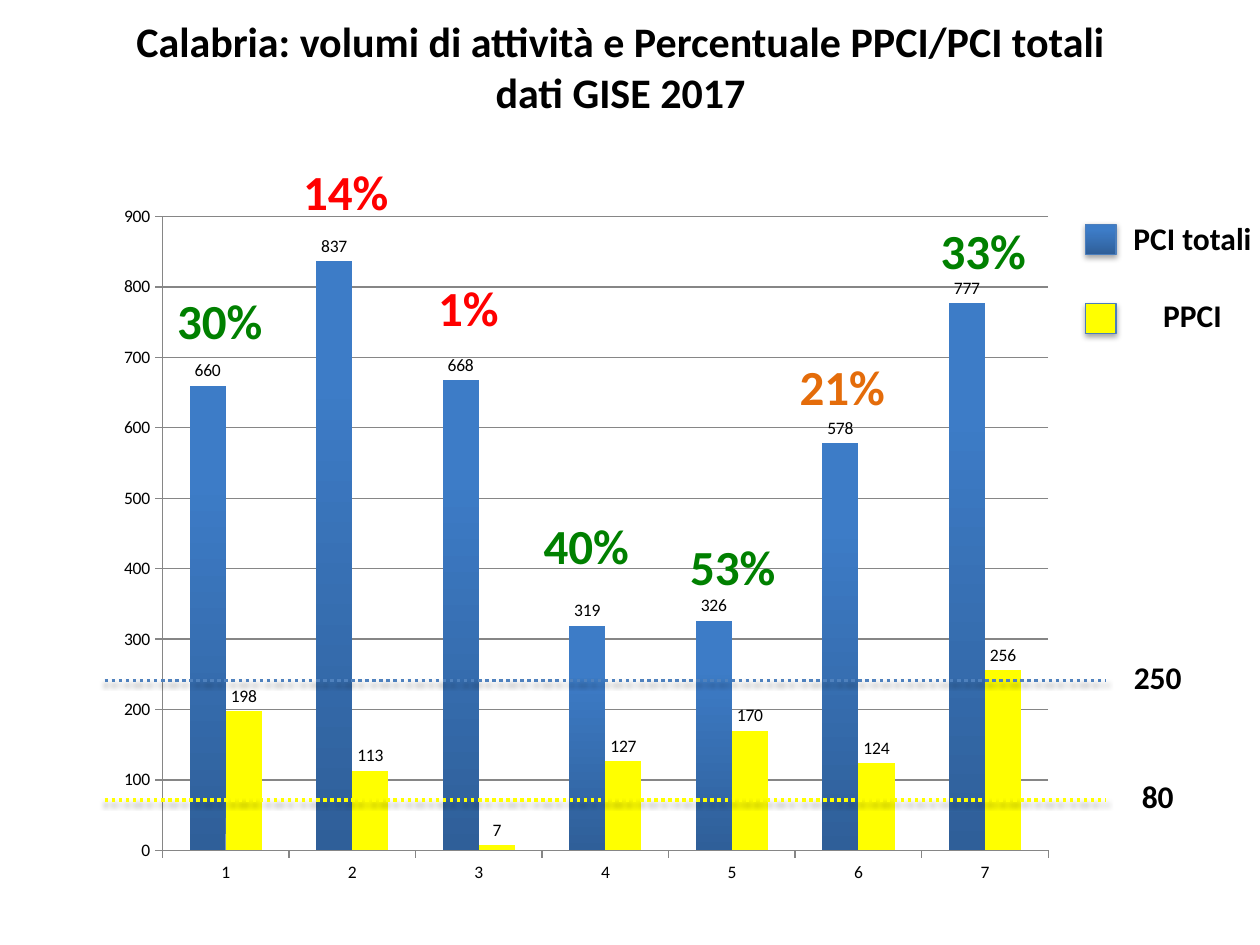
from lxml.etree import SubElement
from pptx import Presentation
from pptx.chart.data import CategoryChartData
from pptx.dml.color import RGBColor
from pptx.enum.chart import XL_CHART_TYPE as ChartType, XL_LABEL_POSITION as LabelPosition
from pptx.enum.chart import XL_TICK_MARK as TickMark
from pptx.enum.dml import MSO_LINE_DASH_STYLE as Dash
from pptx.enum.shapes import MSO_CONNECTOR as Connector, MSO_SHAPE as Shape
from pptx.enum.text import MSO_ANCHOR as Anchor, PP_ALIGN as Align
from pptx.oxml.ns import qn
from pptx.util import Cm, Pt

FONT = "Calibri"
COLORS = {
    "black": "000000",
    "blue": "4F81BD",
    "dark blue": "2F5F99",
    "bright blue": "3D7CC7",
    "outline": "4B7EBC",
    "yellow": "FFFF00",
    "grid": "868686",
    "green": "008000",
    "red": "FF0000",
    "orange": "E46C0A",
}
TOTAL_PCI = (660, 837, 668, 319, 326, 578, 777)
PRIMARY_PCI = (198, 113, 7, 127, 170, 124, 256)

# text, colour, centre x and top in cm
PERCENTAGES = (
    ("30%", "green", 4.43, 5.72),
    ("14%", "red", 6.97, 3.12),
    ("1%", "red", 9.44, 5.46),
    ("40%", "green", 11.82, 10.26),
    ("53%", "green", 14.77, 10.69),
    ("21%", "orange", 16.98, 7.06),
    ("33%", "green", 19.82, 4.32),
)
# text, colour, y in cm
THRESHOLDS = (("250", "blue", 13.72), ("80", "yellow", 16.13))


def rgb(name):
    return RGBColor.from_string(COLORS[name])


def write_text(frame, *lines, size=18, color="black", space_before=0):
    """Fill a text frame with bold centred paragraphs, spaced after the first."""
    for index, line in enumerate(lines):
        paragraph = frame.add_paragraph() if index else frame.paragraphs[0]
        paragraph.alignment = Align.CENTER
        paragraph.space_before = Pt(space_before if index else 0)
        run = paragraph.add_run()
        run.text = line
        run.font.name = FONT
        run.font.size = Pt(size)
        run.font.bold = True
        run.font.color.rgb = rgb(color)


def add_label(shapes, left, top, width, height, *lines, **text_format):
    box = shapes.add_textbox(Cm(left), Cm(top), Cm(width), Cm(height))
    box.text_frame.word_wrap = False
    box.text_frame.vertical_anchor = Anchor.MIDDLE
    write_text(box.text_frame, *lines, **text_format)


def add_shadow(shape, alpha):
    """Drop a soft shadow below a shape whose fill and line are already set."""
    effects = SubElement(shape._element.spPr, qn("a:effectLst"))
    shadow = SubElement(effects, qn("a:outerShdw"), blurRad="40000", dist="22000",
                        dir="5400000", rotWithShape="0")
    color = SubElement(shadow, qn("a:srgbClr"), val=COLORS["black"])
    SubElement(color, qn("a:alpha"), val=str(alpha * 1000))


def fill_blue_gradient(fill):
    fill.gradient()
    fill.gradient_angle = 90
    stops = ((0, "dark blue"), (0.8, "bright blue"))
    for stop, (position, color) in zip(fill.gradient_stops, stops):
        stop.position = position
        stop.color.rgb = rgb(color)


def fill_yellow(fill):
    fill.solid()
    fill.fore_color.rgb = rgb("yellow")


def set_plot_area(chart, **fractions):
    """Fix the inner plot area as fractions of the chart's frame."""
    plot_area = chart._chartSpace.chart.plotArea
    for old in plot_area.findall(qn("c:layout")):
        plot_area.remove(old)
    layout = SubElement(plot_area, qn("c:layout"))
    plot_area.insert(0, layout)
    manual = SubElement(layout, qn("c:manualLayout"))
    settings = {"layoutTarget": "inner", "xMode": "edge", "yMode": "edge", **fractions}
    for name, value in settings.items():
        SubElement(manual, qn(f"c:{name}"), val=str(value))


def add_volume_chart(slide):
    data = CategoryChartData()
    data.categories = [str(number + 1) for number in range(len(TOTAL_PCI))]
    data.add_series("Series 1", TOTAL_PCI)
    data.add_series("Series 2", PRIMARY_PCI)
    chart = slide.shapes.add_chart(ChartType.COLUMN_CLUSTERED, Cm(2.11), Cm(3.94),
                                   Cm(19.41), Cm(14.2), data).chart
    chart.has_legend = False
    chart.has_title = False
    chart.font.name = FONT
    chart.font.size = Pt(10)
    chart.font.color.rgb = rgb("black")
    set_plot_area(chart, x=0.06, y=0.03, w=0.92, h=0.9)

    plot = chart.plots[0]
    plot.vary_by_categories = False
    plot.gap_width = 150
    plot.overlap = 0
    for series, fill_series in zip(plot.series, (fill_blue_gradient, fill_yellow)):
        fill_series(series.format.fill)
        series.invert_if_negative = False
        series.data_labels.show_value = True
        series.data_labels.position = LabelPosition.OUTSIDE_END

    values = chart.value_axis
    values.minimum_scale, values.maximum_scale, values.major_unit = 0, 900, 100
    values.has_major_gridlines = True
    for axis in (values, chart.category_axis):
        axis.major_tick_mark = TickMark.OUTSIDE
    for item in (values, chart.category_axis, values.major_gridlines):
        item.format.line.color.rgb = rgb("grid")
        item.format.line.width = Pt(0.75)


def add_percentages(slide):
    group = slide.shapes.add_group_shape()
    width = 2.26
    for text, color, center, top in PERCENTAGES:
        add_label(group.shapes, center - width / 2, top, width, 1.45, text,
                  size=28, color=color)


def add_legend(slide):
    for top, fill_key in ((4.52, fill_blue_gradient), (6.12, fill_yellow)):
        key = slide.shapes.add_shape(Shape.RECTANGLE, Cm(21.89), Cm(top), Cm(0.61), Cm(0.61))
        fill_key(key.fill)
        key.line.color.rgb = rgb("outline")
        key.line.width = Pt(0.75)
        add_shadow(key, alpha=35)
    add_label(slide.shapes, 22.58, 4.29, 2.92, 2.57, "PCI totali", "PPCI", space_before=22)


def add_threshold(slide, text, color, y):
    shapes = slide.shapes.add_group_shape().shapes
    line = shapes.add_connector(Connector.STRAIGHT, Cm(2.11), Cm(y), Cm(22.3), Cm(y))
    line.line.color.rgb = rgb(color)
    line.line.width = Pt(2)
    line.line.dash_style = Dash.ROUND_DOT
    add_shadow(line, alpha=38)
    add_label(shapes, 22.59, y - 0.59, 1.5, 1.02, text)


def add_title(slide):
    title = slide.shapes.title
    title.left, title.top, title.width, title.height = Cm(2.31), Cm(0.18), Cm(20.4), Cm(2.31)
    title.text_frame.vertical_anchor = Anchor.MIDDLE
    write_text(title.text_frame, "Calabria: volumi di attività e Percentuale PPCI/PCI totali",
               "dati GISE 2017", size=24)


def main():
    presentation = Presentation()
    presentation.slide_width, presentation.slide_height = Cm(25.4), Cm(19.05)
    slide = presentation.slides.add_slide(presentation.slide_layouts[5])
    add_title(slide)
    add_volume_chart(slide)
    add_percentages(slide)
    add_legend(slide)
    for threshold in THRESHOLDS:
        add_threshold(slide, *threshold)
    presentation.save("out.pptx")


if __name__ == "__main__":
    main()
